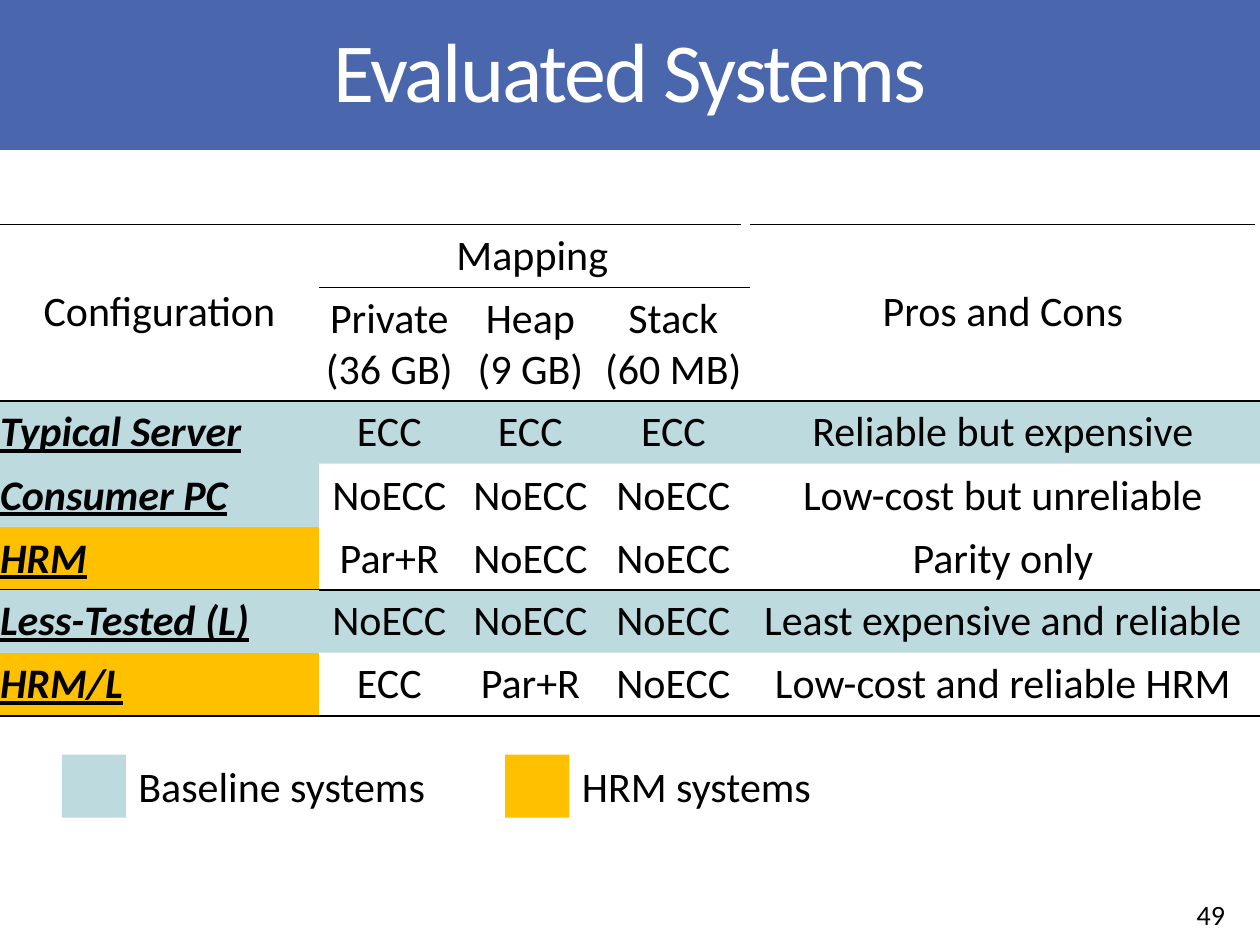
from lxml import etree
from pptx import Presentation
from pptx.dml.color import RGBColor
from pptx.enum.shapes import MSO_SHAPE
from pptx.enum.text import MSO_ANCHOR, MSO_AUTO_SIZE, PP_ALIGN
from pptx.oxml.ns import qn
from pptx.util import Inches, Pt

RECT = MSO_SHAPE.RECTANGLE
TOP, MID = MSO_ANCHOR.TOP, MSO_ANCHOR.MIDDLE
LEFT, MIDDLE, RIGHT = PP_ALIGN.LEFT, PP_ALIGN.CENTER, PP_ALIGN.RIGHT
GROW = MSO_AUTO_SIZE.SHAPE_TO_FIT_TEXT

THEME = {
    "font": "Calibri", "title": 48, "body": 24, "page": 16,
    "ink": "000000", "paper": "FFFFFF", "band": "4A66AC",
    "base": "BDDADF", "hrm": "FFC000",
}
PLAIN = "{2D5ABB26-0587-4C30-8999-92F81FD0307C}"  # table style without grid

# Content
TITLE, PAGE = "Evaluated Systems", "49"
HEAD = [
    ("Configuration", "Mapping", "", "", "Pros and Cons"),
    ("", "Private\n(36 GB)", "Heap\n(9 GB)", "Stack\n(60 MB)", ""),
]
MAIN = [
    ("Typical Server", "ECC", "ECC", "ECC", "Reliable but expensive"),
    ("Consumer PC", "NoECC", "NoECC", "NoECC", "Low-cost but unreliable"),
    ("HRM", "Par+R", "NoECC", "NoECC", "Parity only"),
]
MORE = [
    ("Less-Tested (L)", "NoECC", "NoECC", "NoECC",
     "Least expensive and reliable"),
    ("HRM/L", "ECC", "Par+R", "NoECC", "Low-cost and reliable HRM"),
]
LEGEND = [("Baseline systems", "base", 2.5), ("HRM systems", "hrm", 2.04)]

# Grid, in inches
WIDE, HIGH = 10, 7.5
COLS = [2.53, 1.12, 1.12, 1.15, 4.08]
ROW, TALL = 0.5, 0.9
UPPER, LOWER = 1.78, 4.68
KEY_X, KEY_Y, KEY_STEP, KEY_W = 0.49, 5.99, 3.52, 0.51


def color(name):
    return RGBColor.from_string(THEME[name])


def write(frame, text, size="body", ink="ink", align=LEFT, mark=False):
    for i, line in enumerate(text.split("\n")):
        para = frame.paragraphs[0] if i == 0 else frame.add_paragraph()
        para.alignment = align
        run = para.add_run()
        run.text = line
        font = run.font
        font.name, font.size = THEME["font"], Pt(THEME[size])
        font.color.rgb = color(ink)
        if mark:
            font.bold = font.italic = font.underline = True
    return para


def block(shapes, x, y, w, h, fill):
    box = shapes.add_shape(RECT, Inches(x), Inches(y), Inches(w), Inches(h))
    box.shadow.inherit = False
    box.fill.solid()
    box.fill.fore_color.rgb = color(fill)
    box.line.fill.background()
    return box


def label(shapes, x, y, w, h):
    box = shapes.add_textbox(Inches(x), Inches(y), Inches(w), Inches(h))
    return box.text_frame


def edge(cell, side, tint="ink", width=1):
    line = etree.SubElement(cell._tc.get_or_add_tcPr(), qn("a:ln" + side),
                            w=str(Pt(width)))
    fill = etree.SubElement(line, qn("a:solidFill"))
    etree.SubElement(fill, qn("a:srgbClr"), val=THEME[tint])


def grid(shapes, top, rows, heads=0):
    tall = [TALL if r == 1 and heads else ROW for r in range(len(rows))]
    frame = shapes.add_table(len(rows), len(COLS), 0, Inches(top),
                             Inches(WIDE), Inches(sum(tall)))
    table = frame.table
    table.first_row = table.horz_banding = False
    table._tbl.tblPr.find(qn("a:tableStyleId")).text = PLAIN
    for col, wide in zip(table.columns, COLS):
        col.width = Inches(wide)
    for row, high in zip(table.rows, tall):
        row.height = Inches(high)
    if heads:
        for a, b in [((0, 0), (1, 0)), ((0, 1), (0, 3)), ((0, 4), (1, 4))]:
            table.cell(*a).merge(table.cell(*b))

    for r, row in enumerate(rows):
        head = r < heads
        for c, text in enumerate(row):
            cell = table.cell(r, c)
            cell.margin_left = cell.margin_right = 0
            cell.vertical_anchor = MID if head else TOP
            # Rules: top, under each header row, bottom; white gap in header
            if head and r == 0 and c == 4:
                edge(cell, "L", "paper", 6)
            if head and r == 0 and c in (1, 2, 3):
                edge(cell, "R", "paper", 6)
            if r == 0:
                edge(cell, "T")
            if head or r == len(rows) - 1:
                edge(cell, "B")
            # Names are tinted by system type, other cells are clear
            name = c == 0 and not head
            if head or name:
                cell.fill.solid()
                tint = "hrm" if text.startswith("HRM") else "base"
                cell.fill.fore_color.rgb = color("paper" if head else tint)
            else:
                cell.fill.background()
            if text:
                write(cell.text_frame, text, mark=name,
                      align=LEFT if name else MIDDLE)


def main():
    deck = Presentation()
    deck.slide_width, deck.slide_height = Inches(WIDE), Inches(HIGH)
    shapes = deck.slides.add_slide(deck.slide_layouts[6]).shapes

    # Bands behind the baseline rows
    for y in (LOWER, LOWER - 3 * ROW):
        block(shapes, 0, y, WIDE, ROW, "base")

    # Title and page number
    frame = block(shapes, 0, 0, WIDE, 1.19, "band").text_frame
    frame.word_wrap, frame.vertical_anchor = True, MID
    para = write(frame, TITLE, "title", "paper", MIDDLE)
    para.line_spacing = 0.9
    para.runs[0].font._element.set("spc", "-120")
    frame = label(shapes, 7.57, 7.06, 2.25, 0.4)
    frame.word_wrap, frame.vertical_anchor = True, MID
    write(frame, PAGE, "page", align=RIGHT)

    # Upper table
    grid(shapes, UPPER, HEAD + MAIN, len(HEAD))

    # Legend
    for i, (text, tint, wide) in enumerate(LEGEND):
        x = KEY_X + i * KEY_STEP
        group = shapes.add_group_shape().shapes
        block(group, x, KEY_Y, KEY_W, ROW, tint)
        frame = label(group, x + KEY_W, KEY_Y, wide, ROW)
        frame.word_wrap, frame.auto_size = False, GROW
        write(frame, text)

    # Lower table
    grid(shapes, LOWER, MORE)
    deck.save("out.pptx")


if __name__ == "__main__":
    main()
